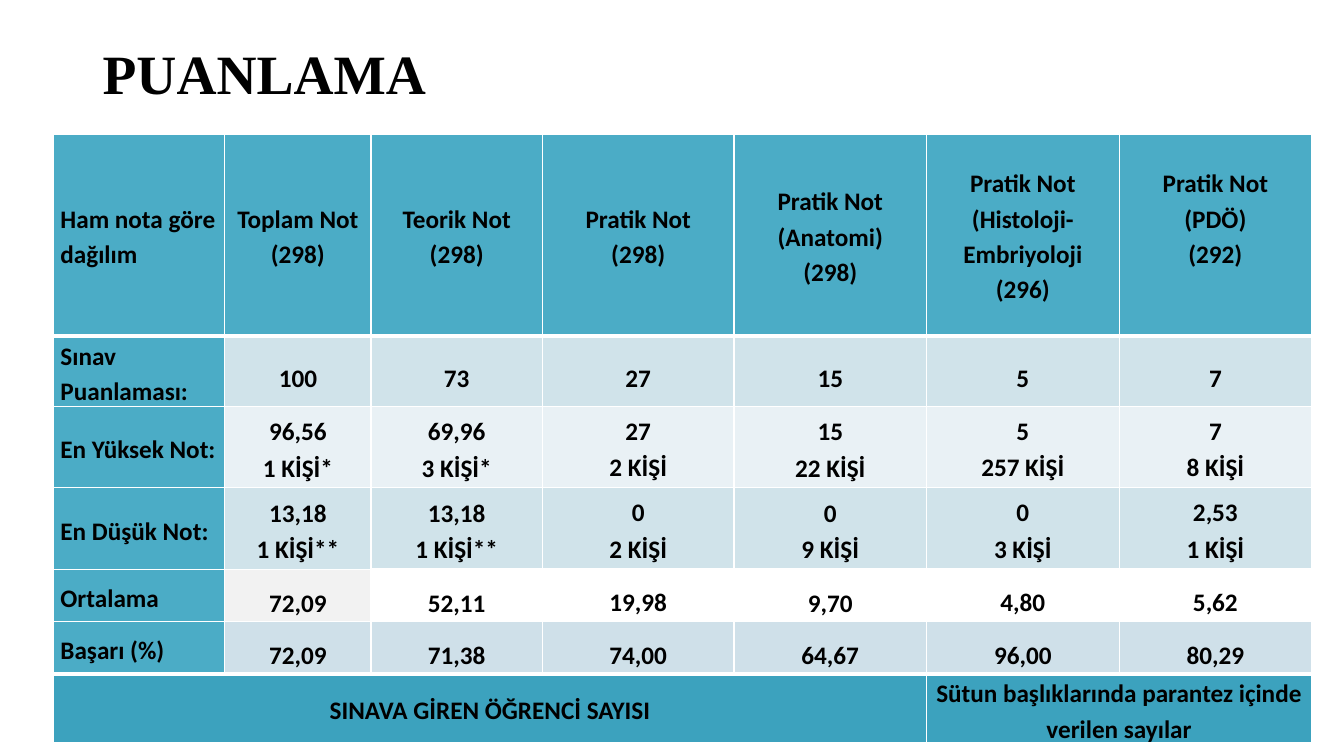
from lxml import etree
from pptx import Presentation
from pptx.dml.color import RGBColor
from pptx.enum.text import MSO_ANCHOR, PP_ALIGN
from pptx.oxml.ns import qn
from pptx.util import Inches, Pt

LEFT, CENTER = PP_ALIGN.LEFT, PP_ALIGN.CENTER
MIDDLE = MSO_ANCHOR.MIDDLE

TITLE = "PUANLAMA"
WIDTHS = [1.7, 1.45, 1.7, 1.9, 1.91, 1.91, 1.91]
TEAL, PALE, LIGHT = "4BACC6", "D0E3EA", "E9F1F5"
GREY, MIST, DEEP = "F2F2F2", "CFE0E9", "3CA2BE"

# height, fill of the value cells, line spacing of the value cells, texts
ROWS = [
    (2, TEAL, 1.15, [
        "Ham nota göre dağılım", "Toplam Not\n(298)", "Teorik Not\n(298)",
        "Pratik Not\n(298)", "Pratik Not\n(Anatomi)\n(298)",
        "Pratik Not\n(Histoloji-Embriyoloji\n(296)", "Pratik Not\n(PDÖ)\n(292)"]),
    (0.52, PALE, 1.5, ["Sınav Puanlaması:", "100", "73", "27", "15", "5", "7"]),
    (0.81, LIGHT, Pt(26), [
        "En Yüksek Not:", "96,56\n1 KİŞİ*", "69,96\n3 KİŞİ*", "27\n2 KİŞİ",
        "15\n22 KİŞİ", "5\n257 KİŞİ", "7\n8 KİŞİ"]),
    (0.81, PALE, Pt(26), [
        "En Düşük Not:", "13,18\n1 KİŞİ**", "13,18\n1 KİŞİ**", "0\n2 KİŞİ",
        "0\n9 KİŞİ", "0\n3 KİŞİ", "2,53\n1 KİŞİ"]),
    (0.52, None, 1.5, ["Ortalama", "72,09", "52,11", "19,98", "9,70", "4,80", "5,62"]),
    (0.52, MIST, 1.5, ["Başarı (%)", "72,09", "71,38", "74,00", "64,67", "96,00", "80,29"]),
]
FOOT_H = 0.5
# first column, last column, text
FOOT = [(0, 4, "SINAVA GİREN ÖĞRENCİ SAYISI"),
        (5, 6, "Sütun başlıklarında parantez içinde verilen sayılar")]
TIGHT = (3, 5, 6)        # columns without cell margins
LAST = len(ROWS)


def color(code):
    return RGBColor.from_string(code)


def write(frame, text, size, font, align, gap):
    for i, line in enumerate(text.split("\n")):
        para = frame.paragraphs[0] if i == 0 else frame.add_paragraph()
        para.alignment = align
        para.line_spacing = gap
        run = para.add_run()
        run.text = line
        run.font.size = Pt(size)
        run.font.name = font
        run.font.bold = True
        run.font.color.rgb = color("000000")


def paint(cell, fill):
    if fill:
        cell.fill.solid()
        cell.fill.fore_color.rgb = color(fill)
    else:
        cell.fill.background()


def border(cell, top, bottom):
    """Draw white cell borders, 1 pt at the sides; call before filling."""
    props = cell._tc.get_or_add_tcPr()
    for side, width in (("L", 1), ("R", 1), ("T", top), ("B", bottom)):
        line = etree.SubElement(props, qn("a:ln" + side), w=str(Pt(width)))
        solid = etree.SubElement(line, qn("a:solidFill"))
        etree.SubElement(solid, qn("a:srgbClr"), val="FFFFFF")


def thick(row, col):
    """Width of the rule under a cell."""
    return 3 if row in (0, 5, LAST) or (row == 3 and col > 1) else 1


def fill_cell(cell, row, col, text, fill, gap, align):
    border(cell, thick(row - 1, col) if row else 1, thick(row, col))
    paint(cell, fill)
    bare = col in TIGHT or row == LAST
    cell.margin_left = cell.margin_right = Inches(0 if bare else 0.07)
    cell.margin_top = Inches(0 if bare else 0.01)
    cell.margin_bottom = 0
    cell.vertical_anchor = MIDDLE
    write(cell.text_frame, text, 18, "Calibri", align, gap)


def add_title(slide):
    box = slide.shapes.add_textbox(Inches(0.92), Inches(0.4), Inches(11.5), Inches(0.72))
    frame = box.text_frame
    frame.word_wrap = True
    frame.vertical_anchor = MIDDLE
    write(frame, TITLE, 39.6, "Times New Roman", LEFT, 0.9)


def add_scores(slide):
    highs = [row[0] for row in ROWS] + [FOOT_H]
    table = slide.shapes.add_table(
        len(highs), len(WIDTHS), Inches(0.53), Inches(1.33),
        Inches(sum(WIDTHS)), Inches(sum(highs))).table
    table.first_row = table.horz_banding = False
    for col, width in zip(table.columns, WIDTHS):
        col.width = Inches(width)
    for row, high in zip(table.rows, highs):
        row.height = Inches(high)

    for r, (_, tint, gap, texts) in enumerate(ROWS):
        for c, text in enumerate(texts):
            fill = tint if c else TEAL
            if tint is None and c == 1:
                fill = GREY
            fill_cell(table.cell(r, c), r, c, text, fill,
                      gap if c else 1.15, CENTER if c else LEFT)
    table.cell(0, 6).margin_bottom = Inches(0.35)

    for first, last, text in FOOT:
        cell = table.cell(LAST, first)
        cell.merge(table.cell(LAST, last))
        fill_cell(cell, LAST, first, text, DEEP, 1.15, CENTER)


def main():
    deck = Presentation()
    deck.slide_width, deck.slide_height = Inches(13.33), Inches(7.5)
    slide = deck.slides.add_slide(deck.slide_layouts[6])
    add_title(slide)
    add_scores(slide)
    deck.save("out.pptx")


if __name__ == "__main__":
    main()
